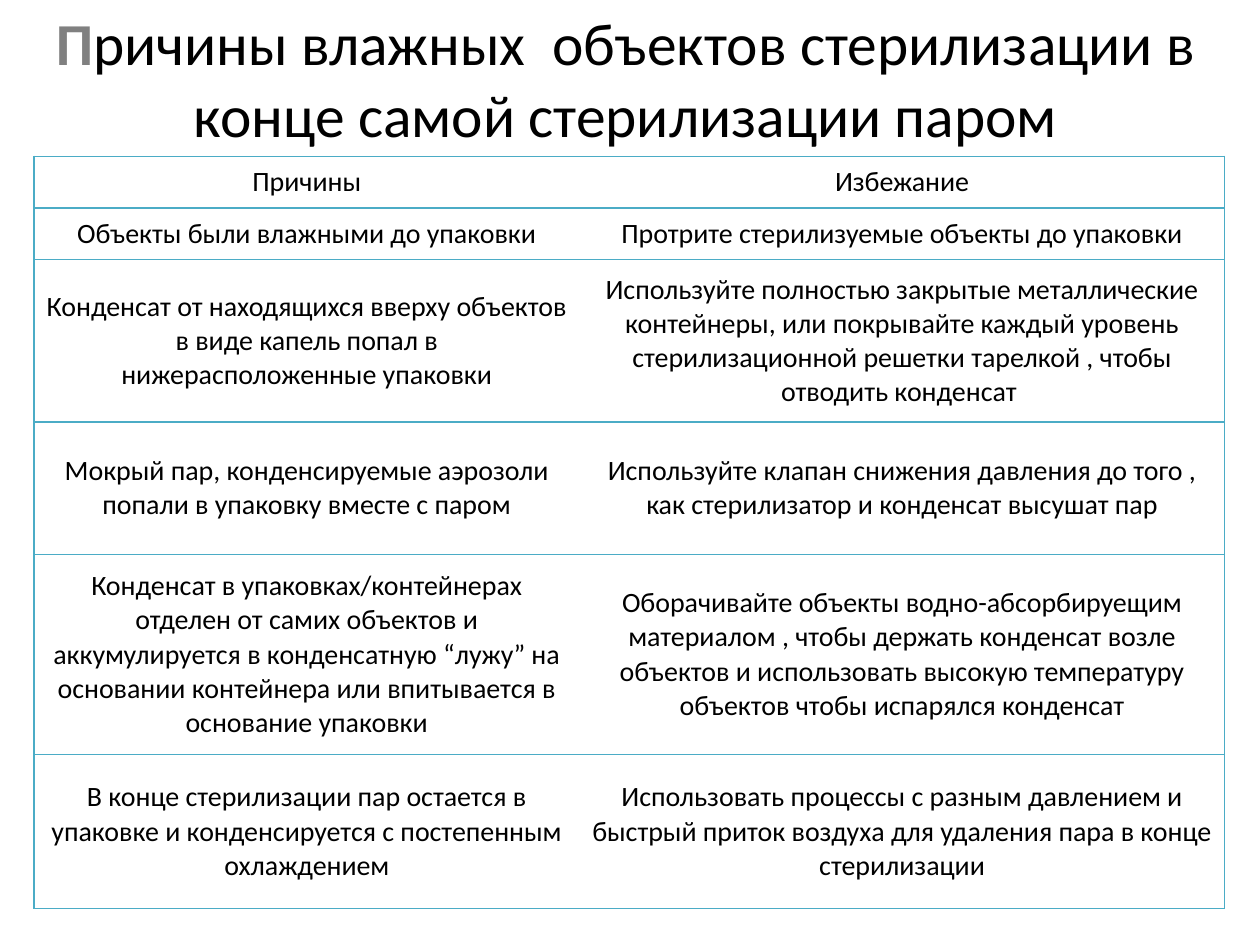
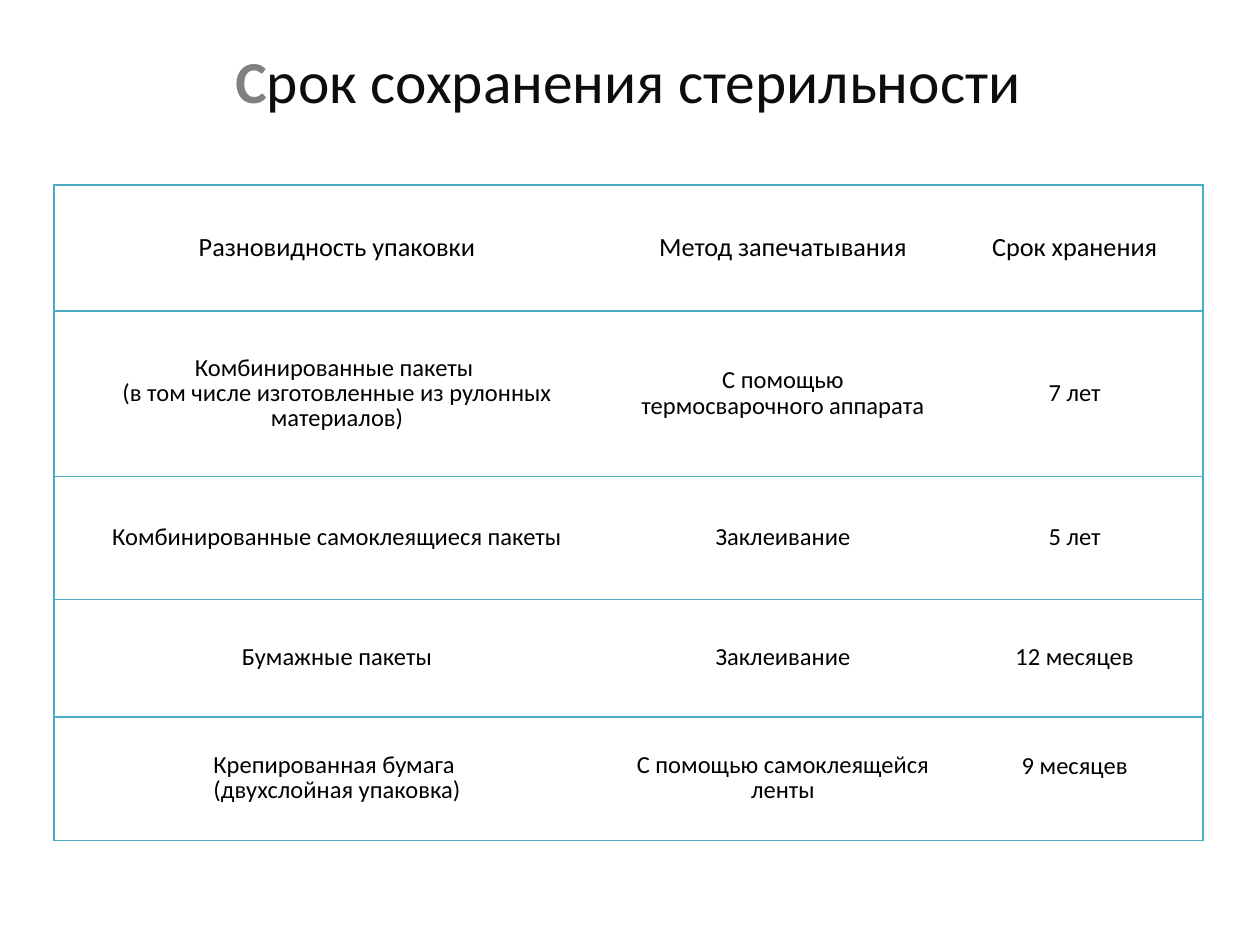
from dataclasses import dataclass

from lxml.etree import SubElement
from pptx import Presentation
from pptx.dml.color import RGBColor
from pptx.enum.text import MSO_ANCHOR, PP_ALIGN
from pptx.oxml.ns import qn
from pptx.slide import Slide
from pptx.table import Table, _Cell
from pptx.util import Emu, Pt

PX = 9144


@dataclass(frozen=True)
class Theme:
    font: str = "Calibri"
    background: str = "FFFFFF"
    initial: str = "808080"
    text: str = "000000"
    soft_text: str = "0D0D0D"
    border: str = "4BACC6"
    border_width: int = 1
    title_size: int = 34
    large_size: int = 16
    medium_size: int = 15
    small_size: int = 14


@dataclass(frozen=True)
class Frame:
    left: int
    top: int
    width: int
    height: int


@dataclass(frozen=True)
class Title:
    frame: Frame
    initial: str
    rest: str
    anchor: MSO_ANCHOR
    color: str


@dataclass(frozen=True)
class Grid:
    left: int
    top: int
    columns: tuple[int, ...]
    heights: tuple[int, ...]
    rows: tuple[tuple[str, ...], ...]
    header_size: int
    body_size: int
    line_spacing: float


THEME = Theme()

WET_LOAD_TITLE = Title(
    Frame(20, 0, 953, 125),
    "П",
    "ричины влажных  объектов стерилизации в конце самой стерилизации паром",
    MSO_ANCHOR.TOP,
    THEME.text,
)
WET_LOAD_GRID = Grid(
    left=27,
    top=124,
    columns=(433, 512),
    heights=(41, 41, 129, 105, 159, 122),
    rows=(
        ("Причины", "Избежание"),
        ("Объекты были влажными до упаковки", "Протрите стерилизуемые объекты до упаковки"),
        (
            "Конденсат от находящихся вверху объектов в виде капель попал в нижерасположенные упаковки",
            "Используйте полностью закрытые металлические контейнеры, или покрывайте каждый уровень "
            "стерилизационной решетки тарелкой , чтобы отводить конденсат ",
        ),
        (
            "Мокрый пар, конденсируемые аэрозоли попали в упаковку вместе с паром",
            "Используйте клапан снижения давления до того , как стерилизатор и конденсат высушат пар",
        ),
        (
            "Конденсат в упаковках/контейнерах отделен от самих объектов и аккумулируется в "
            "конденсатную “лужу” на основании контейнера или впитывается в основание упаковки",
            "Оборачивайте объекты водно-абсорбируещим материалом , чтобы держать конденсат возле "
            "объектов и использовать высокую температуру объектов чтобы испарялся конденсат",
        ),
        (
            "В конце стерилизации пар остается в упаковке и конденсируется с постепенным охлаждением",
            "Использовать процессы с разным давлением и быстрый приток воздуха для удаления пара "
            "в конце стерилизации",
        ),
    ),
    header_size=THEME.large_size,
    body_size=THEME.large_size,
    line_spacing=1.0,
)

SHELF_LIFE_TITLE = Title(
    Frame(33, 25, 931, 77),
    "С",
    "рок сохранения стерильности",
    MSO_ANCHOR.MIDDLE,
    THEME.soft_text,
)
SHELF_LIFE_GRID = Grid(
    left=43,
    top=147,
    columns=(449, 259, 204),
    heights=(100, 131, 98, 93, 98),
    rows=(
        ("Разновидность упаковки", "Метод запечатывания", "Срок хранения"),
        (
            "Комбинированные пакеты \n(в том числе изготовленные из рулонных материалов)",
            "С помощью термосварочного аппарата",
            "7 лет",
        ),
        ("Комбинированные самоклеящиеся пакеты", "Заклеивание", "5 лет"),
        ("Бумажные пакеты", "Заклеивание", "12 месяцев"),
        (
            "Крепированная бумага \n(двухслойная упаковка)",
            "С помощью самоклеящейся ленты",
            "9 месяцев",
        ),
    ),
    header_size=THEME.medium_size,
    body_size=THEME.small_size,
    line_spacing=0.85,
)
LAST_TERM_BOTTOM_INSET = 24


def px(length: int) -> Emu:
    return Emu(length * PX)


def add_title(page: Slide, title: Title) -> None:
    frame = title.frame
    box = page.shapes.add_textbox(px(frame.left), px(frame.top), px(frame.width), px(frame.height))
    text = box.text_frame
    text.word_wrap = True
    text.vertical_anchor = title.anchor
    paragraph = text.paragraphs[0]
    paragraph.alignment = PP_ALIGN.CENTER
    paragraph.font.name = THEME.font
    paragraph.font.size = Pt(THEME.title_size)
    for words, color, bold in ((title.initial, THEME.initial, True), (title.rest, title.color, False)):
        span = paragraph.add_run()
        span.text = words
        span.font.bold = bold
        span.font.color.rgb = RGBColor.from_string(color)


def set_borders(cell: _Cell, sides: str) -> None:
    properties = cell._tc.get_or_add_tcPr()
    for position, side in enumerate("LRTB"):
        width = Pt(THEME.border_width) if side in sides else 0
        line = SubElement(properties, qn(f"a:ln{side}"), w=str(width))
        if side in sides:
            fill = SubElement(line, qn("a:solidFill"))
            SubElement(fill, qn("a:srgbClr"), val=THEME.border)
        else:
            SubElement(line, qn("a:noFill"))
        properties.insert(position, line)


def fill_cell(cell: _Cell, words: str, size: int, line_spacing: float) -> None:
    cell.text = words
    cell.vertical_anchor = MSO_ANCHOR.MIDDLE
    cell.fill.solid()
    cell.fill.fore_color.rgb = RGBColor.from_string(THEME.background)
    for paragraph in cell.text_frame.paragraphs:
        paragraph.alignment = PP_ALIGN.CENTER
        paragraph.line_spacing = line_spacing
        paragraph.font.name = THEME.font
        paragraph.font.size = Pt(size)
        paragraph.font.color.rgb = RGBColor.from_string(THEME.text)


def add_grid(page: Slide, grid: Grid) -> Table:
    table = page.shapes.add_table(
        len(grid.rows), len(grid.columns), px(grid.left), px(grid.top),
        px(sum(grid.columns)), px(sum(grid.heights)),
    ).table
    table.first_row = False
    table.horz_banding = False
    for column, width in zip(table.columns, grid.columns):
        column.width = px(width)
    for row, height in zip(table.rows, grid.heights):
        row.height = px(height)
    last_column = len(grid.columns) - 1
    for row_index, row_words in enumerate(grid.rows):
        size = grid.body_size if row_index else grid.header_size
        for column_index, words in enumerate(row_words):
            cell = table.cell(row_index, column_index)
            fill_cell(cell, words, size, grid.line_spacing)
            sides = "TB" + "L" * (column_index == 0) + "R" * (column_index == last_column)
            set_borders(cell, sides)
    return table


def add_page(deck: Presentation, title: Title, grid: Grid) -> Table:
    page = deck.slides.add_slide(deck.slide_layouts[6])
    page.background.fill.solid()
    page.background.fill.fore_color.rgb = RGBColor.from_string(THEME.background)
    table = add_grid(page, grid)
    add_title(page, title)
    return table


def main() -> None:
    deck = Presentation()
    deck.slide_width = px(1000)
    deck.slide_height = px(750)
    add_page(deck, WET_LOAD_TITLE, WET_LOAD_GRID)
    shelf_life = add_page(deck, SHELF_LIFE_TITLE, SHELF_LIFE_GRID)
    last_term = shelf_life.cell(len(SHELF_LIFE_GRID.rows) - 1, len(SHELF_LIFE_GRID.columns) - 1)
    last_term.margin_bottom = px(LAST_TERM_BOTTOM_INSET)
    deck.save("out.pptx")


if __name__ == "__main__":
    main()
